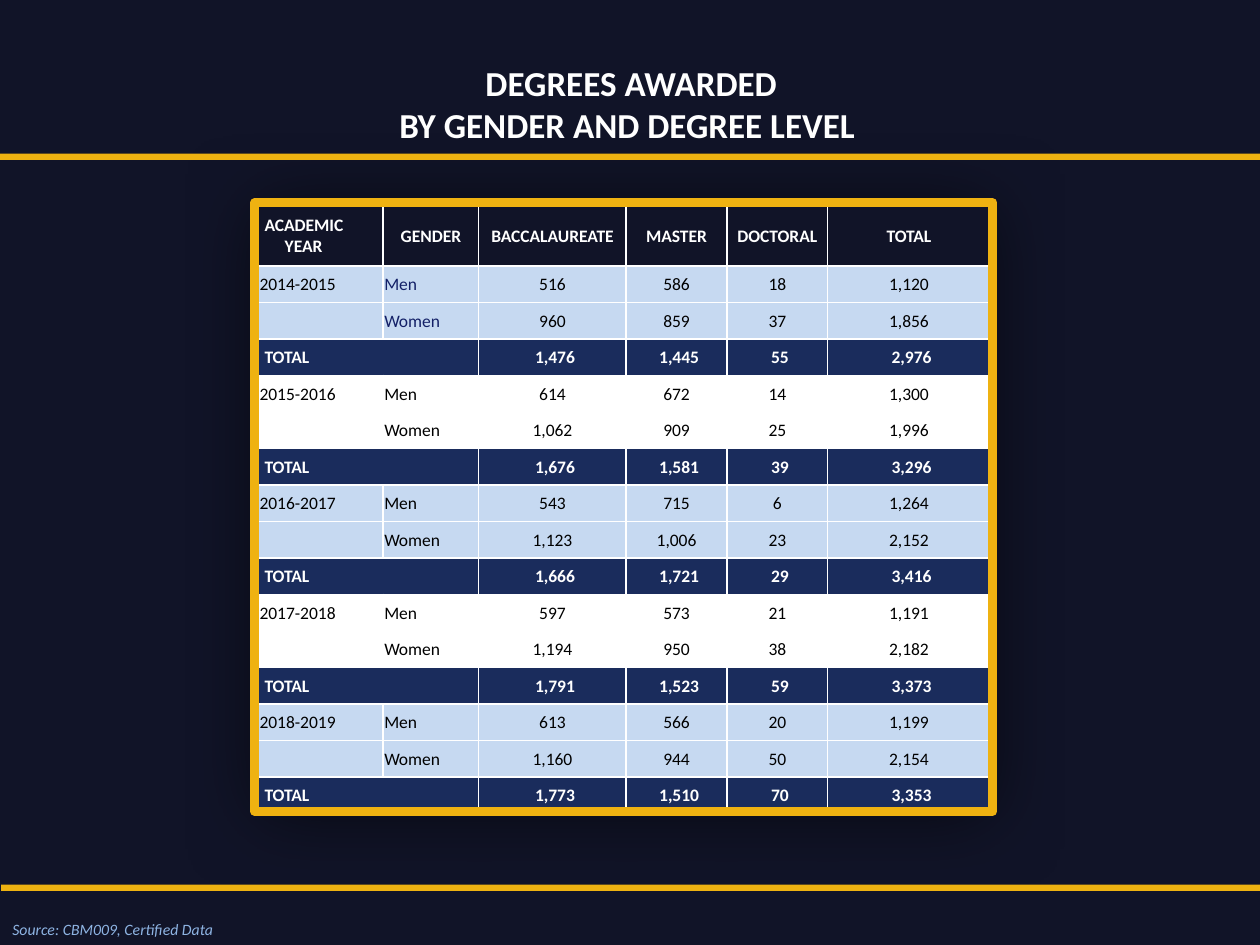
from lxml import etree
from pptx import Presentation
from pptx.dml.color import RGBColor
from pptx.enum.shapes import MSO_SHAPE
from pptx.enum.text import MSO_ANCHOR, MSO_AUTO_SIZE, PP_ALIGN
from pptx.oxml.ns import qn
from pptx.util import Inches, Pt

LEFT, CENTER = PP_ALIGN.LEFT, PP_ALIGN.CENTER
TOP, MIDDLE = MSO_ANCHOR.TOP, MSO_ANCHOR.MIDDLE
NO_AUTOFIT = MSO_AUTO_SIZE.NONE
RECTANGLE = MSO_SHAPE.RECTANGLE

NIGHT = RGBColor(0x11, 0x14, 0x28)
NAVY = RGBColor(0x1A, 0x2C, 0x5C)
INDIGO = RGBColor(0x13, 0x20, 0x67)
PALE_BLUE = RGBColor(0xC6, 0xD9, 0xF1)
SKY = RGBColor(0x8E, 0xB4, 0xE3)
GOLD = RGBColor(0xEE, 0xB2, 0x11)
FRAME_GOLD = RGBColor(0xEF, 0xB2, 0x11)
WHITE = RGBColor(0xFF, 0xFF, 0xFF)
BLACK = RGBColor(0x00, 0x00, 0x00)

COLUMN_WIDTHS = [0.99, 0.76, 1.17, 0.8, 0.8, 1.29]
HEADER_HEIGHT, ROW_HEIGHT = 0.47, 0.29
HEADER_MARGINS = (0.05, 0.05, 0.05, 0.05)
BODY_MARGINS = (0.01, 0.01, 0.01, 0)
TOTAL_MARGINS = (0.05, 0.01, 0.01, 0)
YEAR_INDENT = 0.16

HEADERS = ["GENDER", "BACCALAUREATE", "MASTER", "DOCTORAL", "TOTAL"]
# Academic year, then the figures for men, women and both together
DEGREES = [
    ("2014-2015", ["516", "586", "18", "1,120"],
     ["960", "859", "37", "1,856"], ["1,476", "1,445", "55", "2,976"]),
    ("2015-2016", ["614", "672", "14", "1,300"],
     ["1,062", "909", "25", "1,996"], ["1,676", "1,581", "39", "3,296"]),
    ("2016-2017", ["543", "715", "6", "1,264"],
     ["1,123", "1,006", "23", "2,152"], ["1,666", "1,721", "29", "3,416"]),
    ("2017-2018", ["597", "573", "21", "1,191"],
     ["1,194", "950", "38", "2,182"], ["1,791", "1,523", "59", "3,373"]),
    ("2018-2019", ["613", "566", "20", "1,199"],
     ["1,160", "944", "50", "2,154"], ["1,773", "1,510", "70", "3,353"]),
]


class SlideBuilder:
    font = "Calibri"
    table_size = 10

    def __init__(self, presentation):
        self.slide = presentation.slides.add_slide(presentation.slide_layouts[5])
        self.slide.background.fill.solid()
        self.slide.background.fill.fore_color.rgb = NIGHT

    def add_lines(self, frame, lines, size, color, align=LEFT, bold=False, italic=False):
        for index, line in enumerate(lines):
            paragraph = frame.paragraphs[0] if index == 0 else frame.add_paragraph()
            paragraph.alignment = align
            run = paragraph.add_run()
            run.text = line
            run.font.name = self.font
            run.font.size = Pt(size)
            run.font.color.rgb = color
            run.font.bold = bold
            run.font.italic = italic

    def place(self, shape, left, top, width, height):
        shape.left, shape.top = Inches(left), Inches(top)
        shape.width, shape.height = Inches(width), Inches(height)
        frame = shape.text_frame
        frame.word_wrap = True
        frame.auto_size = NO_AUTOFIT
        frame.vertical_anchor = TOP
        return frame

    def title(self, lines, *box):
        frame = self.place(self.slide.shapes.title, *box)
        self.add_lines(frame, lines, 20, WHITE, CENTER, bold=True)

    def note(self, text, *box):
        shape = self.slide.shapes.add_textbox(0, 0, 0, 0)
        self.add_lines(self.place(shape, *box), [text], 9, SKY, italic=True)

    def rectangle(self, left, top, width, height, fill=None, line=None, weight=0):
        shape = self.slide.shapes.add_shape(
            RECTANGLE, Inches(left), Inches(top), Inches(width), Inches(height))
        shape.shadow.inherit = False
        if fill is None:
            shape.fill.background()
        else:
            shape.fill.solid()
            shape.fill.fore_color.rgb = fill
        if line is None:
            shape.line.fill.background()
        else:
            shape.line.color.rgb = line
            shape.line.width = Pt(weight)

    def table(self, left, top, row_heights):
        graphic = self.slide.shapes.add_table(
            len(row_heights), len(COLUMN_WIDTHS), Inches(left), Inches(top),
            Inches(sum(COLUMN_WIDTHS)), Inches(sum(row_heights)))
        table = graphic.table
        table.first_row = table.horz_banding = False
        for column, width in zip(table.columns, COLUMN_WIDTHS):
            column.width = Inches(width)
        for row, height in zip(table.rows, row_heights):
            row.height = Inches(height)
        # Soft dark shadow around the table
        properties = graphic._element.find(".//" + qn("a:tblPr"))
        effects = etree.Element(qn("a:effectLst"))
        shadow = etree.SubElement(effects, qn("a:outerShdw"), algn="ctr",
                                  blurRad=str(Inches(0.6)), rotWithShape="0")
        shade = etree.SubElement(shadow, qn("a:srgbClr"), val=str(BLACK))
        etree.SubElement(shade, qn("a:alpha"), val="60000")
        properties.insert(0, effects)
        return table

    def cell(self, cell, lines, fill, color, margins, align=LEFT, bold=False):
        cell.fill.solid()
        cell.fill.fore_color.rgb = fill
        cell.vertical_anchor = MIDDLE
        (cell.margin_left, cell.margin_right,
         cell.margin_top, cell.margin_bottom) = map(Inches, margins)
        if lines:
            self.add_lines(cell.text_frame, lines, self.table_size, color, align, bold)
        else:
            # Keep the empty line as low as the text of the row
            etree.SubElement(cell.text_frame.paragraphs[0]._p, qn("a:endParaRPr"),
                             sz=str(self.table_size * 100))

    def row(self, table, index, labels, figures, fill, colors, margins, bold=False):
        label_color, gender_color, figure_color = colors
        first, second = labels
        self.cell(table.cell(index, 0), first, fill, label_color, margins, bold=bold)
        self.cell(table.cell(index, 1), second, fill, gender_color, margins,
                  CENTER if index == 0 else LEFT, bold)
        for column, figure in enumerate(figures, start=2):
            self.cell(table.cell(index, column), [figure], fill, figure_color,
                      margins, CENTER, bold)


def main():
    presentation = Presentation()
    presentation.slide_width, presentation.slide_height = Inches(10), Inches(7.5)
    builder = SlideBuilder(presentation)

    # Table header
    heights = [HEADER_HEIGHT] + [ROW_HEIGHT] * (3 * len(DEGREES))
    table = builder.table(2.05, 1.64, heights)
    builder.row(table, 0, (["ACADEMIC", "YEAR"], HEADERS[:1]), HEADERS[1:],
                NIGHT, [WHITE] * 3, HEADER_MARGINS, bold=True)
    year_line = table.cell(0, 0).text_frame.paragraphs[1]
    year_line._p.get_or_add_pPr().set("marL", str(Inches(YEAR_INDENT)))

    # Three rows for each academic year
    for group, (year, men, women, total) in enumerate(DEGREES):
        start = 1 + 3 * group
        fill = WHITE if group % 2 else PALE_BLUE
        colors = (BLACK, BLACK if group else INDIGO, BLACK)
        builder.row(table, start, ([year], ["Men"]), men, fill, colors, BODY_MARGINS)
        builder.row(table, start + 1, ([], ["Women"]), women, fill, colors, BODY_MARGINS)
        builder.row(table, start + 2, (["TOTAL"], []), total, NAVY, [WHITE] * 3,
                    TOTAL_MARGINS, bold=True)
        table.cell(start + 2, 0).merge(table.cell(start + 2, 1))

    # Title and source
    builder.title(["DEGREES AWARDED", "BY GENDER AND DEGREE LEVEL "],
                  1.73, 0.44, 6.56, 0.77)
    builder.note("Source: CBM009, Certified Data", 0, 7.25, 1.96, 0.25)

    # Gold rules and table frame
    builder.rectangle(0.01, 7.02, 10, 0.05, fill=GOLD)
    builder.rectangle(0, 1.22, 10, 0.05, fill=GOLD)
    builder.rectangle(2.02, 1.61, 5.86, 4.83, line=FRAME_GOLD, weight=5)

    presentation.save("out.pptx")


if __name__ == "__main__":
    main()
